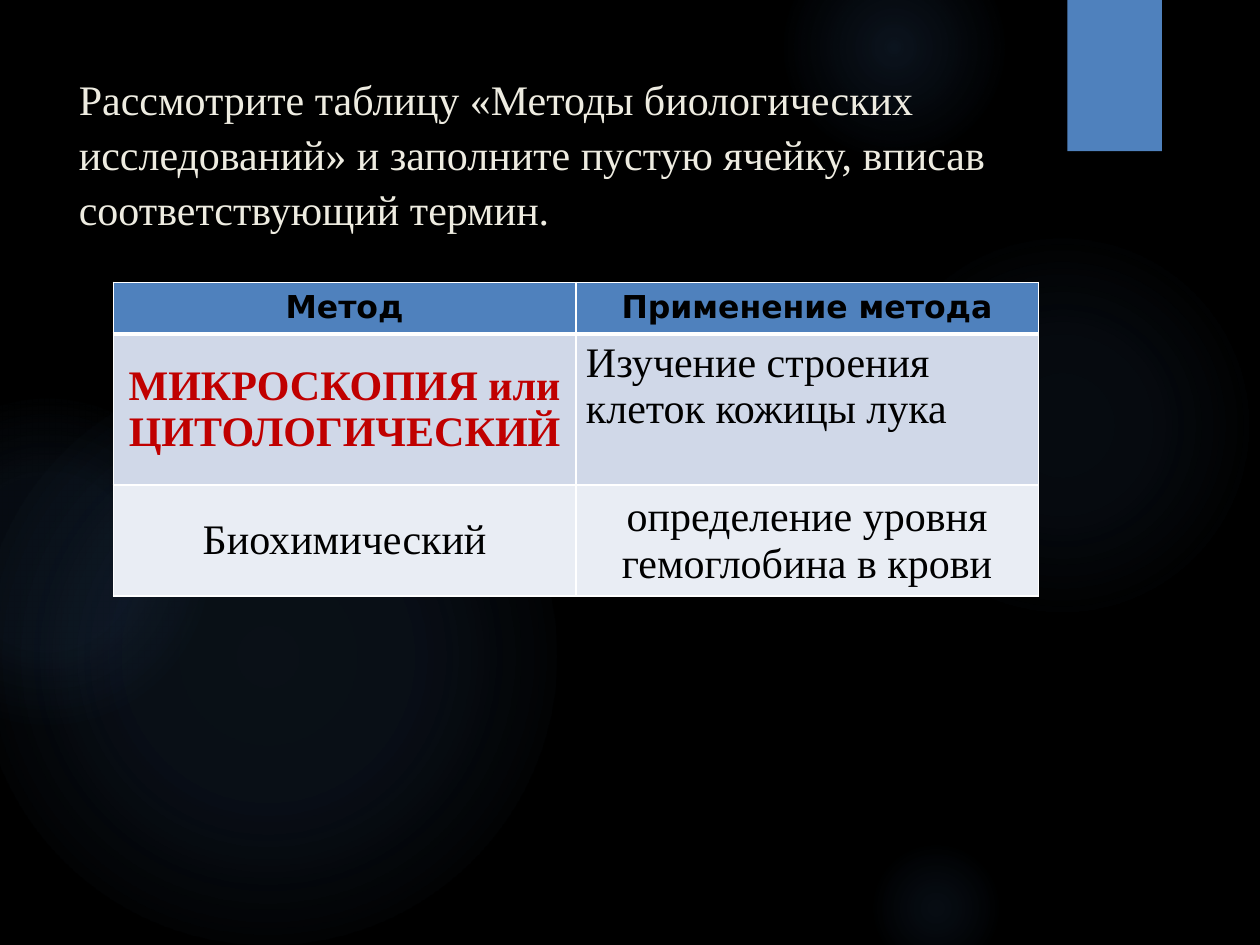
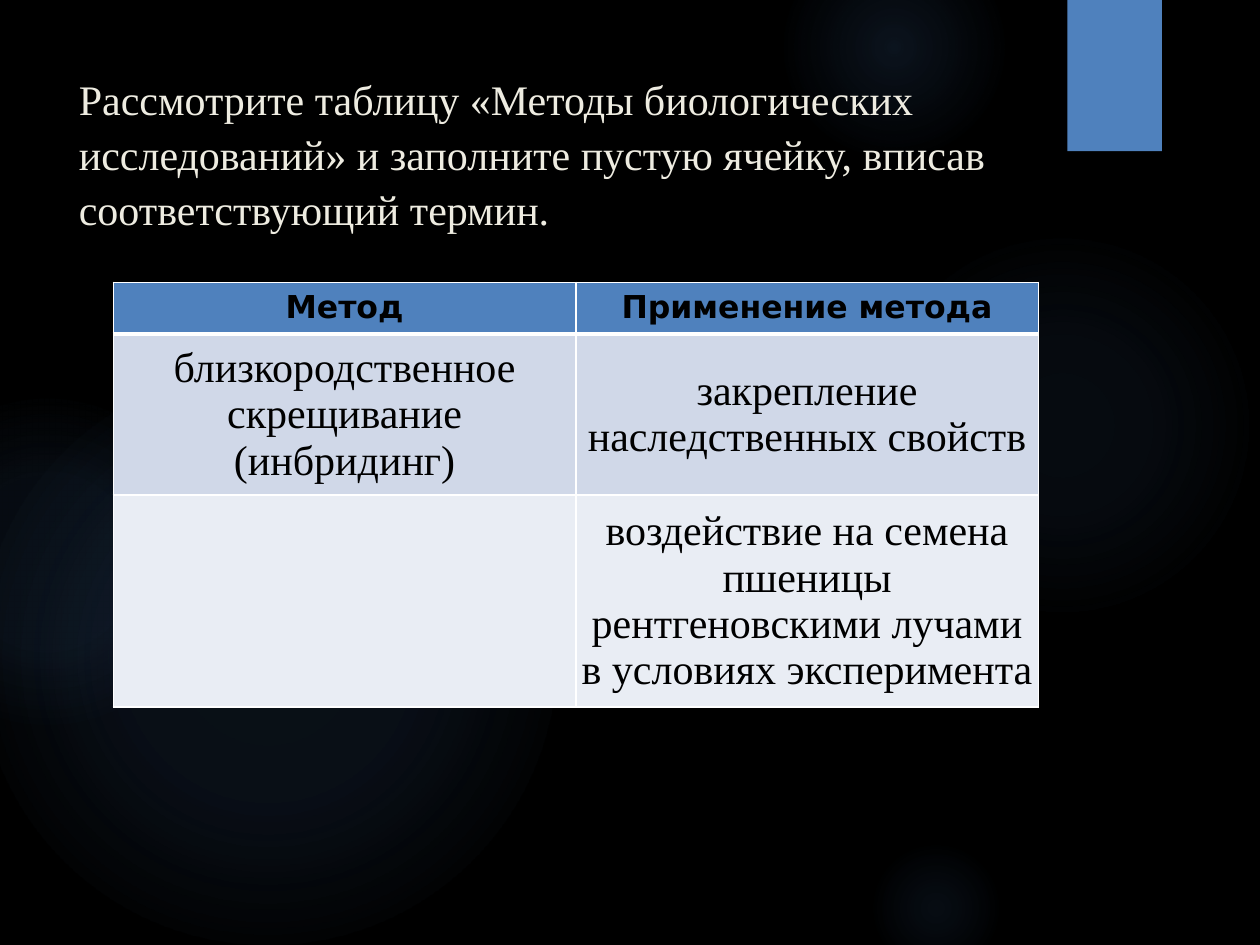
from dataclasses import dataclass

import pptx
import pptx.dml.color
import pptx.enum.shapes
import pptx.enum.text
import pptx.oxml
import pptx.oxml.ns
import pptx.util

Pt = pptx.util.Pt
Align = pptx.enum.text.PP_ALIGN
Anchor = pptx.enum.text.MSO_ANCHOR
ShapeKind = pptx.enum.shapes.MSO_SHAPE

COLOURS = {
    "background": "000000",
    "glow": "558ED5",
    "accent": "4F81BD",
    "title": "EEECE1",
    "text": "000000",
    "answer": "C00000",
    "border": "FFFFFF",
    "row_odd": "D0D8E8",
    "row_even": "E9EDF4",
}
BODY_FONT = "Times New Roman"
HEADER_FONT = "DejaVu Sans"

TITLE = ("Рассмотрите таблицу «Методы биологических исследований» "
         "и заполните пустую ячейку, вписав соответствующий термин.")
HEADERS = ("Метод", "Применение метода")
COLUMN_WIDTH = 264.25
HEADER_HEIGHT = 29.5


@dataclass(frozen=True)
class Glow:
    left: float
    top: float
    size: float
    stops: tuple[tuple[int, int], ...]  # (position %, opacity %)


@dataclass(frozen=True)
class TextStyle:
    size: float = 24
    font: str = BODY_FONT
    colour: str = "text"
    bold: bool = False


@dataclass(frozen=True)
class CellText:
    text: str
    style: TextStyle = TextStyle()
    align: Align = Align.CENTER
    anchor: Anchor = Anchor.MIDDLE
    side_inset: float = 2.2
    end_inset: float = 2.9


@dataclass(frozen=True)
class TableRow:
    height: float
    cells: tuple[CellText, CellText]


GLOWS = (
    Glow(496, 132, 222, ((0, 7), (36, 6), (69, 0))),
    Glow(448, -36, 126, ((0, 14), (36, 7), (73, 0))),
    Glow(496, 480, 78, ((0, 9), (36, 5), (66, 0))),
    Glow(-12, 210, 330, ((0, 11), (36, 10), (75, 0))),
    Glow(-66, 228, 186, ((0, 8), (36, 8), (72, 0))),
)
HEADER_STYLE = TextStyle(size=18, font=HEADER_FONT, bold=True)
HEADER_ROW = TableRow(HEADER_HEIGHT, tuple(CellText(name, HEADER_STYLE) for name in HEADERS))

SLIDE_ROWS = (
    (
        TableRow(86.5, (
            CellText("МИКРОСКОПИЯ или ЦИТОЛОГИЧЕСКИЙ", TextStyle(colour="answer", bold=True)),
            CellText("Изучение строения клеток кожицы лука", align=Align.LEFT,
                     anchor=Anchor.TOP, side_inset=5.8, end_inset=3.6),
        )),
        TableRow(59, (
            CellText("Биохимический"),
            CellText("определение уровня гемоглобина в крови"),
        )),
    ),
    (
        TableRow(85, (
            CellText("близкородственное скрещивание (инбридинг)"),
            CellText("закрепление наследственных свойств"),
        )),
        TableRow(112, (
            CellText(""),
            CellText("воздействие на семена пшеницы рентгеновскими лучами "
                     "в условиях эксперимента"),
        )),
    ),
)


def rgb(name: str) -> pptx.dml.color.RGBColor:
    return pptx.dml.color.RGBColor.from_string(COLOURS[name])


def set_solid(fill, colour: str) -> None:
    fill.solid()
    fill.fore_color.rgb = rgb(colour)


def style_text(text_frame, style: TextStyle) -> None:
    for para in text_frame.paragraphs:
        for span in para.runs:
            span.font.size = Pt(style.size)
            span.font.name = style.font
            span.font.bold = style.bold
            span.font.color.rgb = rgb(style.colour)


def add_plain_shape(page, kind, left: float, top: float, width: float, height: float):
    shape = page.shapes.add_shape(kind, Pt(left), Pt(top), Pt(width), Pt(height))
    shape.shadow.inherit = False
    shape.line.fill.background()
    return shape


def add_glow(page, glow: Glow) -> None:
    """Draw a circle whose colour fades out from the centre."""
    shape = add_plain_shape(page, ShapeKind.OVAL, glow.left, glow.top, glow.size, glow.size)
    stops = "".join(
        f'<a:gs pos="{position * 1000}"><a:srgbClr val="{COLOURS["glow"]}">'
        f'<a:alpha val="{opacity * 1000}"/></a:srgbClr></a:gs>'
        for position, opacity in glow.stops
    )
    gradient = pptx.oxml.parse_xml(
        f'<a:gradFill {pptx.oxml.ns.nsdecls("a")}><a:gsLst>{stops}</a:gsLst>'
        '<a:path path="circle"><a:fillToRect l="50000" t="50000" r="50000" b="50000"/>'
        '</a:path></a:gradFill>'
    )
    shape._element.spPr.find(pptx.oxml.ns.qn("a:prstGeom")).addnext(gradient)


def add_backdrop(page) -> None:
    set_solid(page.background.fill, "background")
    for glow in GLOWS:
        add_glow(page, glow)
    bookmark = add_plain_shape(page, ShapeKind.RECTANGLE, 610, 0, 54, 86.4)
    set_solid(bookmark.fill, "accent")


def add_title(page) -> None:
    box = page.shapes.add_textbox(Pt(38), Pt(36), Pt(556), Pt(110))
    frame = box.text_frame
    frame.word_wrap = True
    frame.vertical_anchor = Anchor.TOP
    frame.text = TITLE
    frame.paragraphs[0].line_spacing = 1.09
    style_text(frame, TextStyle(colour="title"))


def set_borders(cell, row_index: int) -> None:
    """Draw thin white borders, with a thick rule under the header."""
    widths = {
        "L": 1,
        "R": 1,
        "T": 3 if row_index == 1 else 1,
        "B": 3 if row_index == 0 else 1,
    }
    properties = cell._tc.get_or_add_tcPr()
    for side, width in widths.items():
        properties.append(pptx.oxml.parse_xml(
            f'<a:ln{side} {pptx.oxml.ns.nsdecls("a")} w="{Pt(width)}"><a:solidFill>'
            f'<a:srgbClr val="{COLOURS["border"]}"/></a:solidFill></a:ln{side}>'
        ))


def fill_cell(cell, content: CellText, row_index: int) -> None:
    set_borders(cell, row_index)
    set_solid(cell.fill, ("accent", "row_odd", "row_even")[row_index])
    cell.vertical_anchor = content.anchor
    cell.margin_left = cell.margin_right = Pt(content.side_inset)
    cell.margin_top = cell.margin_bottom = Pt(content.end_inset)
    if content.text:
        cell.text_frame.text = content.text
        cell.text_frame.paragraphs[0].alignment = content.align
        style_text(cell.text_frame, content.style)


def add_methods_table(page, body_rows: tuple[TableRow, ...]) -> None:
    rows = (HEADER_ROW, *body_rows)
    height = sum(row.height for row in rows)
    table = page.shapes.add_table(
        len(rows), len(HEADERS), Pt(64.8), Pt(161.3),
        Pt(COLUMN_WIDTH * len(HEADERS)), Pt(height),
    ).table
    table.horz_banding = False
    for column in table.columns:
        column.width = Pt(COLUMN_WIDTH)
    for row_index, row in enumerate(rows):
        table.rows[row_index].height = Pt(row.height)
        for column_index, content in enumerate(row.cells):
            fill_cell(table.cell(row_index, column_index), content, row_index)


def main() -> None:
    deck = pptx.Presentation()
    deck.slide_width, deck.slide_height = Pt(720), Pt(540)
    for body_rows in SLIDE_ROWS:
        page = deck.slides.add_slide(deck.slide_layouts[6])
        add_backdrop(page)
        add_title(page)
        add_methods_table(page, body_rows)
    deck.save("out.pptx")


if __name__ == "__main__":
    main()
